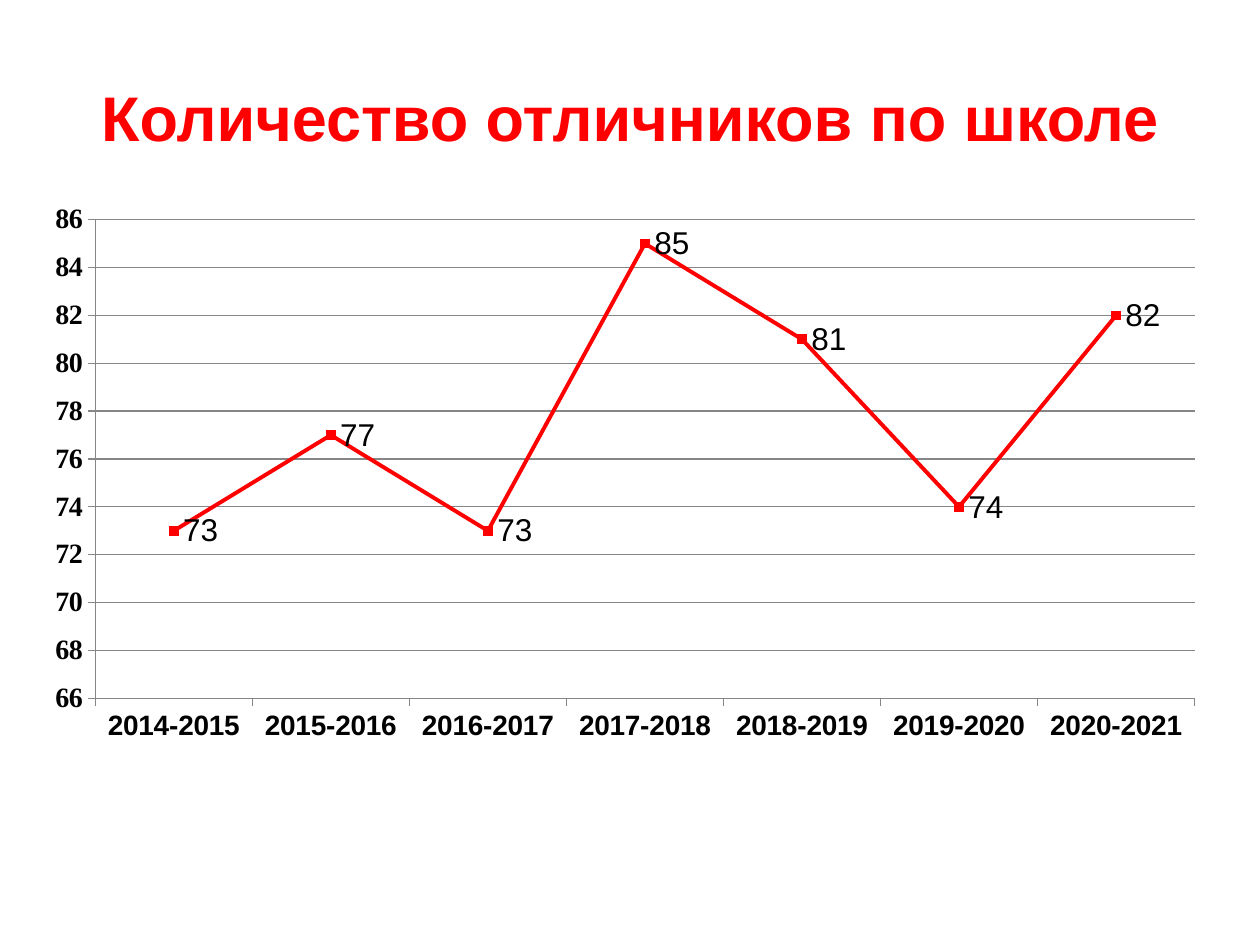
from pptx import Presentation
from pptx.chart.data import CategoryChartData
from pptx.dml.color import RGBColor
from pptx.enum.chart import XL_CHART_TYPE, XL_LABEL_POSITION, XL_MARKER_STYLE, XL_TICK_MARK
from pptx.enum.text import MSO_ANCHOR, PP_ALIGN
from pptx.util import Inches, Pt

RED = RGBColor(0xFF, 0x00, 0x00)
BLACK = RGBColor(0x00, 0x00, 0x00)
GRAY = RGBColor(0x86, 0x86, 0x86)

FIRST_YEAR = 2014
STUDENT_COUNTS = [73, 77, 73, 85, 81, 74, 82]


def style_font(font, size, color, name="Arial", bold=False):
    font.name = name
    font.size = Pt(size)
    font.bold = bold
    font.color.rgb = color


def set_title(slide, text):
    title = slide.shapes.title
    title.left, title.top = Inches(0.5), Inches(0.3)
    title.width, title.height = Inches(9), Inches(1.25)
    text_frame = title.text_frame
    text_frame.text = text
    text_frame.vertical_anchor = MSO_ANCHOR.MIDDLE
    paragraph = text_frame.paragraphs[0]
    paragraph.alignment = PP_ALIGN.CENTER
    style_font(paragraph.runs[0].font, 36, RED, bold=True)


def style_axis(axis, font_name):
    style_font(axis.tick_labels.font, 16, BLACK, font_name, bold=True)
    axis.major_tick_mark = XL_TICK_MARK.OUTSIDE
    axis.minor_tick_mark = XL_TICK_MARK.NONE
    axis.format.line.color.rgb = GRAY
    axis.format.line.width = Pt(0.75)


def style_series(series):
    series.smooth = False
    series.format.line.color.rgb = RED
    series.format.line.width = Pt(2.25)
    marker = series.marker
    marker.style = XL_MARKER_STYLE.SQUARE
    marker.size = 5
    marker.format.fill.solid()
    marker.format.fill.fore_color.rgb = RED
    marker.format.line.color.rgb = RED


def add_line_chart(slide):
    chart_data = CategoryChartData()
    chart_data.categories = [
        f"{year}-{year + 1}"
        for year in range(FIRST_YEAR, FIRST_YEAR + len(STUDENT_COUNTS))
    ]
    chart_data.add_series("Series 1", STUDENT_COUNTS)
    chart = slide.shapes.add_chart(
        XL_CHART_TYPE.LINE_MARKERS,
        Inches(0.25), Inches(1.53), Inches(9.42), Inches(4.44), chart_data,
    ).chart
    chart.has_title = False
    chart.has_legend = False
    style_font(chart.font, 18, BLACK)

    style_axis(chart.category_axis, "Arial")
    value_axis = chart.value_axis
    style_axis(value_axis, "Times New Roman")
    value_axis.minimum_scale = 66
    value_axis.maximum_scale = 86
    value_axis.major_unit = 2
    value_axis.has_major_gridlines = True
    value_axis.major_gridlines.format.line.color.rgb = GRAY
    value_axis.major_gridlines.format.line.width = Pt(0.75)

    plot = chart.plots[0]
    plot.vary_by_categories = False
    plot.has_data_labels = True
    plot.data_labels.show_value = True
    plot.data_labels.position = XL_LABEL_POSITION.RIGHT
    style_font(plot.data_labels.font, 18, BLACK)
    style_series(plot.series[0])


def main():
    presentation = Presentation()
    presentation.slide_width = Inches(10)
    presentation.slide_height = Inches(7.5)
    slide = presentation.slides.add_slide(presentation.slide_layouts[5])
    set_title(slide, "Количество отличников по школе")
    add_line_chart(slide)
    presentation.save("out.pptx")


if __name__ == "__main__":
    main()
